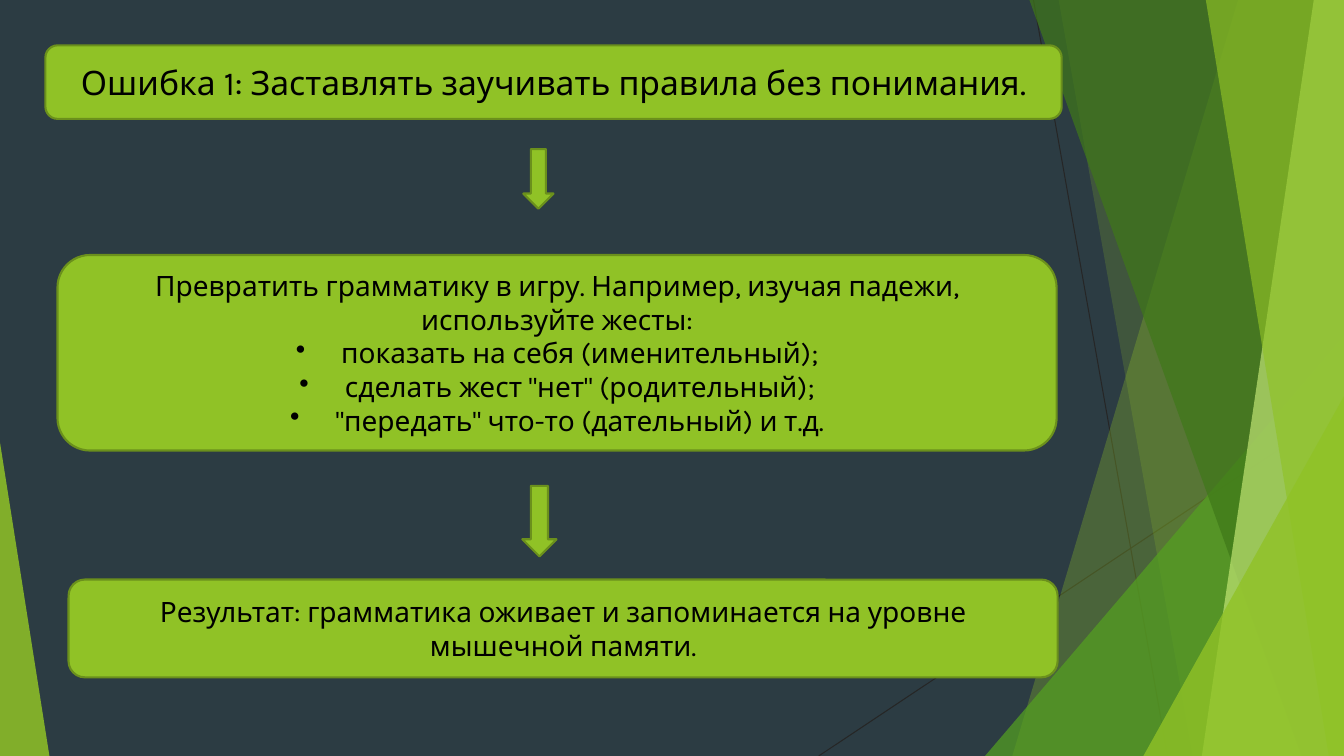
from dataclasses import dataclass

from lxml import etree
from pptx import Presentation
from pptx.enum import shapes, text
from pptx.dml.color import RGBColor
from pptx.oxml import ns
from pptx.util import Inches, Pt

COLORS = {
    "background": "2C3C43",
    "hairline": "262626",
    "lime": "90C226",
    "green": "54A021",
    "forest": "3F7819",
    "pale": "C0E474",
    "outline": "6B901C",
    "text": "000000",
}
FONT = "Karla"
WIDTH, HEIGHT = 13.33, 7.5
BULLET_INDENT = 0.45


@dataclass
class Band:
    """Area between a slanted left edge and the right side of the slide."""
    top_x: float
    bottom_x: float
    color: str
    opacity: int


@dataclass
class Corner:
    """Right triangle standing on the bottom edge of the slide."""
    left: float
    top: float
    width: float
    apex: float
    color: str
    opacity: int


@dataclass
class Card:
    left: float
    top: float
    width: float
    height: float
    size: int
    lead: str
    bullets: tuple[str, ...] = ()


@dataclass
class Arrow:
    left: float
    top: float
    width: float
    height: float


HAIRLINES = [(10.25, 0, 11.58, HEIGHT), (WIDTH, 4.03, 8.12, HEIGHT)]
FACETS = [
    Band(12.28, 10.04, "lime", 30),
    Band(10.5, 11.83, "lime", 20),
    Corner(9.77, 3.33, 3.56, 1, "green", 72),
    Band(10.21, 12.91, "forest", 70),
    Band(13.03, 11.92, "pale", 70),
    Band(11.96, 13.18, "lime", 65),
    Corner(11.34, 3.93, 1.99, 1, "lime", 80),
    Corner(0, 4.39, 0.49, 0, "lime", 85),
]
CARDS = [
    Card(0.45, 0.45, 10.08, 0.73, 24,
         "Ошибка 1: Заставлять заучивать правила без понимания."),
    Card(0.57, 2.53, 9.91, 1.94, 20,
         "Превратить грамматику в игру. Например, изучая падежи, используйте жесты:",
         ("показать на себя (именительный);",
          'сделать жест "нет" (родительный);',
          '"передать" что-то (дательный) и т.д.')),
    Card(0.68, 5.75, 9.81, 0.97, 20,
         "Результат: грамматика оживает и запоминается на уровне мышечной памяти."),
]
ARROWS = [Arrow(5.19, 1.48, 0.3, 0.59), Arrow(5.18, 4.82, 0.34, 0.7)]


def rgb(name: str) -> RGBColor:
    return RGBColor.from_string(COLORS[name])


def paint(shape, color: str, opacity: int = 100, outline: bool = False) -> None:
    shape.shadow.inherit = False
    shape.fill.solid()
    shape.fill.fore_color.rgb = rgb(color)
    if opacity < 100:
        fill_color = shape.fill._xPr.find(".//" + ns.qn("a:srgbClr"))
        etree.SubElement(fill_color, ns.qn("a:alpha"), val=str(opacity * 1000))
    if outline:
        shape.line.color.rgb = rgb("outline")
        shape.line.width = Pt(1.5)
    else:
        shape.line.fill.background()


def add_preset(slide, kind, left: float, top: float, width: float, height: float):
    return slide.shapes.add_shape(
        kind, Inches(left), Inches(top), Inches(width), Inches(height))


def add_hairline(slide, x1: float, y1: float, x2: float, y2: float) -> None:
    line = slide.shapes.add_connector(
        shapes.MSO_CONNECTOR.STRAIGHT, Inches(x1), Inches(y1), Inches(x2), Inches(y2))
    line.line.color.rgb = rgb("hairline")
    line.line.width = Pt(0.75)
    etree.SubElement(line._element.spPr, ns.qn("a:effectLst"))


def add_band(slide, band: Band) -> None:
    builder = slide.shapes.build_freeform(Inches(band.top_x), 0)
    corners = [(WIDTH, 0), (WIDTH, HEIGHT), (band.bottom_x, HEIGHT)]
    builder.add_line_segments([(Inches(x), Inches(y)) for x, y in corners])
    paint(builder.convert_to_shape(), band.color, band.opacity)


def add_corner(slide, corner: Corner) -> None:
    triangle = add_preset(slide, shapes.MSO_SHAPE.ISOSCELES_TRIANGLE, corner.left,
                          corner.top, corner.width, HEIGHT - corner.top)
    triangle.adjustments[0] = corner.apex
    paint(triangle, corner.color, corner.opacity)


def write(paragraph, words: str, size: int, bullet: bool = False) -> None:
    paragraph.alignment = text.PP_ALIGN.CENTER
    run = paragraph.add_run()
    run.text = words
    run.font.name = FONT
    run.font.size = Pt(size)
    run.font.color.rgb = rgb("text")
    if bullet:
        properties = paragraph._p.get_or_add_pPr()
        properties.set("marL", str(Inches(BULLET_INDENT)))
        properties.set("indent", str(-Inches(BULLET_INDENT)))
        etree.SubElement(properties, ns.qn("a:buChar"), char="•")


def add_card(slide, card: Card) -> None:
    box = add_preset(slide, shapes.MSO_SHAPE.ROUNDED_RECTANGLE,
                     card.left, card.top, card.width, card.height)
    paint(box, "lime", outline=True)
    frame = box.text_frame
    frame.word_wrap = True
    frame.vertical_anchor = text.MSO_ANCHOR.MIDDLE
    write(frame.paragraphs[0], card.lead, card.size)
    for item in card.bullets:
        write(frame.add_paragraph(), item, card.size, bullet=True)


def add_arrow(slide, arrow: Arrow) -> None:
    shape = add_preset(slide, shapes.MSO_SHAPE.DOWN_ARROW,
                       arrow.left, arrow.top, arrow.width, arrow.height)
    paint(shape, "lime", outline=True)


def main() -> None:
    presentation = Presentation()
    presentation.slide_width = Inches(WIDTH)
    presentation.slide_height = Inches(HEIGHT)
    slide = presentation.slides.add_slide(presentation.slide_layouts[6])
    slide.background.fill.solid()
    slide.background.fill.fore_color.rgb = rgb("background")

    # Faceted backdrop
    for ends in HAIRLINES:
        add_hairline(slide, *ends)
    for facet in FACETS:
        if isinstance(facet, Band):
            add_band(slide, facet)
        else:
            add_corner(slide, facet)

    # Mistake, remedy and result
    for card in CARDS:
        add_card(slide, card)
    for arrow in ARROWS:
        add_arrow(slide, arrow)

    presentation.save("out.pptx")


if __name__ == "__main__":
    main()
